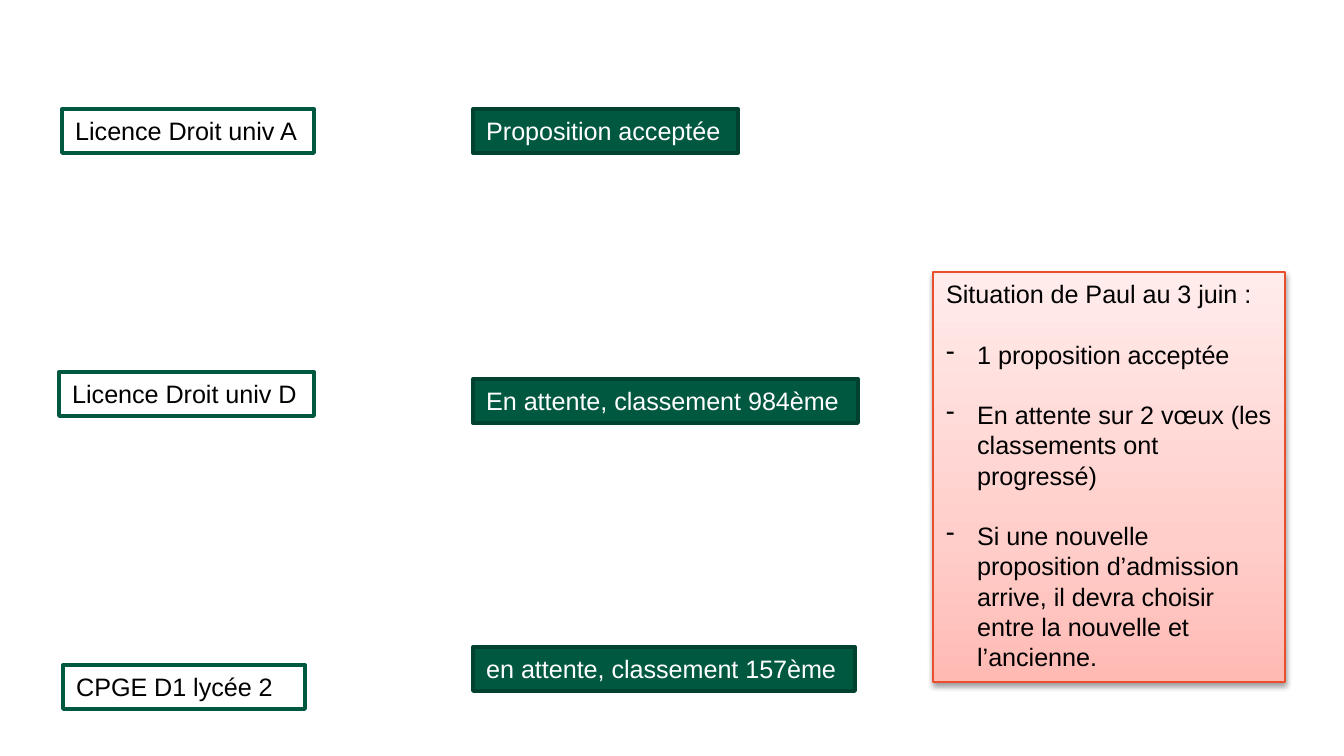
import copy

import pptx
import pptx.dml.color
import pptx.enum.shapes
import pptx.enum.text
import pptx.oxml
import pptx.oxml.ns
import pptx.util

RGB = pptx.dml.color.RGBColor
PX = 914400 / 134.4
WHITE = RGB(0xFF, 0xFF, 0xFF)
BLACK = RGB(0x00, 0x00, 0x00)
GREEN = RGB(0x00, 0x58, 0x41)
DARK_GREEN = RGB(0x00, 0x41, 0x30)
ORANGE = RGB(0xE9, 0x4F, 0x2D)
PINKS = [
    (0, RGB(0xFF, 0xBA, 0xB4)),
    (0.35, RGB(0xFF, 0xCE, 0xCA)),
    (1, RGB(0xFF, 0xEC, 0xEB)),
]
BOX_HEIGHT = 44
STATUS_LEFT = 473
INDENT = 31

# Left, top, width, text, wrap
WISHES = [
    (62, 109, 252, "Licence Droit univ A", False),
    (59, 372, 255, "Licence Droit univ D", False),
    (63, 665, 242, "CPGE D1 lycée 2", True),
]
# Top, width, text
STATUSES = [
    (109, 265, "Proposition acceptée"),
    (379, 385, "En attente, classement 984ème"),
    (647, 382, "en attente, classement 157ème"),
]
SITUATION = [
    "1 proposition acceptée",
    "En attente sur 2 vœux (les classements ont progressé)",
    "Si une nouvelle proposition d’admission arrive, il devra choisir "
    "entre la nouvelle et l’ancienne.",
]


def px(value):
    return pptx.util.Emu(round(value * PX))


def add_box(page, left, top, width, height, line_color, line_width, wrap=True):
    box = page.shapes.add_shape(
        pptx.enum.shapes.MSO_SHAPE.RECTANGLE,
        px(left), px(top), px(width), px(height))
    box.shadow.inherit = False
    box.line.color.rgb = line_color
    box.line.width = pptx.util.Pt(line_width)
    frame = box.text_frame
    frame.word_wrap = wrap
    frame.auto_size = pptx.enum.text.MSO_AUTO_SIZE.SHAPE_TO_FIT_TEXT
    frame.vertical_anchor = pptx.enum.text.MSO_ANCHOR.TOP
    return box


def write(para, text, color=BLACK, size=13.5, before=0, bullet=None):
    para.alignment = pptx.enum.text.PP_ALIGN.LEFT
    if before:
        para.space_before = pptx.util.Pt(before)
    if bullet:
        properties = para._p.get_or_add_pPr()
        properties.set("marL", str(px(INDENT)))
        properties.set("indent", str(-px(INDENT)))
        mark = pptx.oxml.parse_xml(
            f'<a:buChar {pptx.oxml.ns.nsdecls("a")} char="{bullet}"/>')
        properties.append(mark)
    span = para.add_run()
    span.text = text
    span.font.name = "Arial"
    span.font.size = pptx.util.Pt(size)
    span.font.color.rgb = color


def add_label(page, left, top, width, text, fill, line, color, wrap=False):
    box = add_box(page, left, top, width, BOX_HEIGHT, line, 2, wrap)
    box.fill.solid()
    box.fill.fore_color.rgb = fill
    write(box.text_frame.paragraphs[0], text, color=color)


def fill_gradient(box, stops):
    box.fill.gradient()
    box.fill.gradient_angle = 90
    first = box._element.spPr.find(".//" + pptx.oxml.ns.qn("a:gs"))
    first.addnext(copy.deepcopy(first))
    for stop, (position, color) in zip(box.fill.gradient_stops, stops):
        stop.position = position
        stop.color.rgb = color


def add_shadow(box):
    effects = box._element.spPr.find(pptx.oxml.ns.qn("a:effectLst"))
    effects.append(pptx.oxml.parse_xml(
        f'<a:outerShdw {pptx.oxml.ns.nsdecls("a")} blurRad="39370" '
        'dist="20320" dir="5400000" rotWithShape="0"><a:srgbClr val="000000">'
        '<a:alpha val="38000"/></a:srgbClr></a:outerShdw>'))


def add_situation(page):
    box = add_box(page, 933, 272, 352, 410, ORANGE, 0.75)
    fill_gradient(box, PINKS)
    add_shadow(box)
    frame = box.text_frame
    write(frame.paragraphs[0], "Situation de Paul au 3 juin :")
    for text in SITUATION:
        write(frame.add_paragraph(), text, before=16.2, bullet="-")


def main():
    deck = pptx.Presentation()
    deck.slide_width, deck.slide_height = px(1344), px(756)
    page = deck.slides.add_slide(deck.slide_layouts[6])

    # Wishes on the left, their status in the middle
    for left, top, width, text, wrap in WISHES:
        add_label(page, left, top, width, text, WHITE, GREEN, BLACK, wrap)
    for top, width, text in STATUSES:
        add_label(page, STATUS_LEFT, top, width, text, GREEN, DARK_GREEN, WHITE)

    # Summary panel on the right
    add_situation(page)
    deck.save("out.pptx")


if __name__ == "__main__":
    main()
